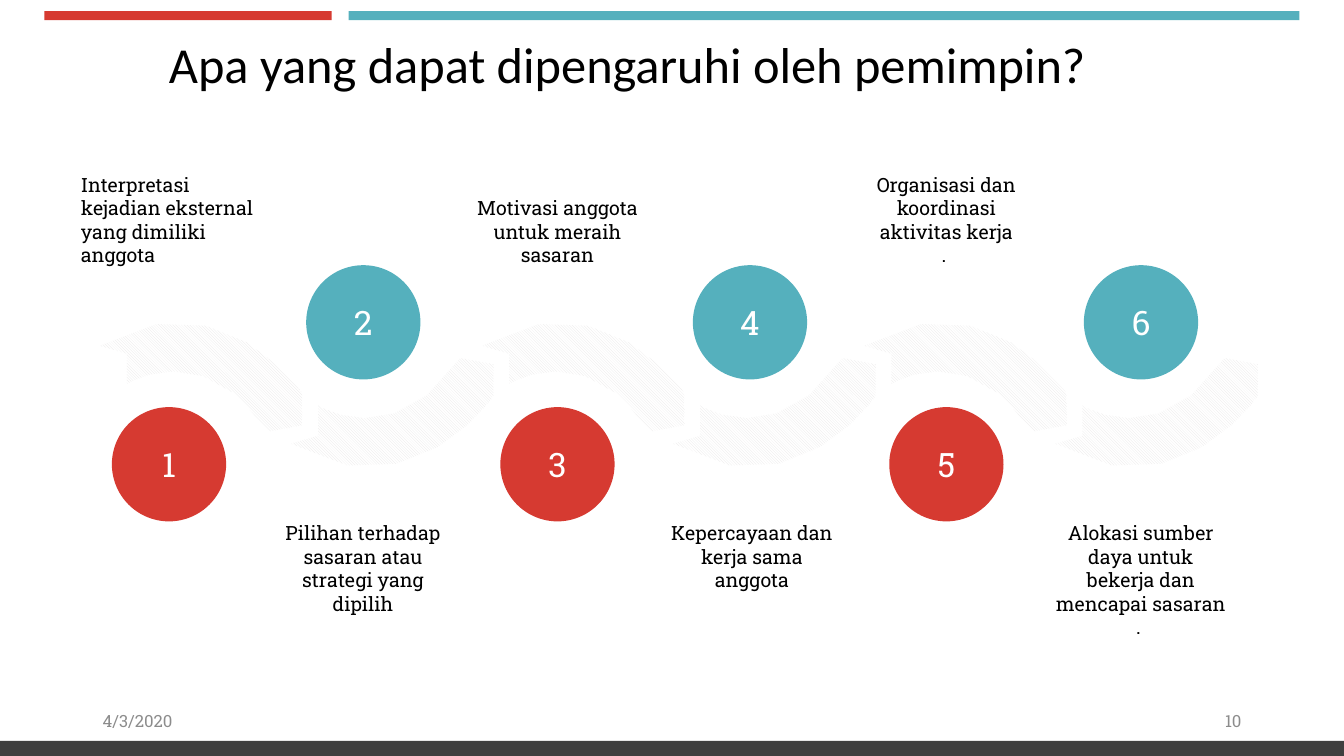
from dataclasses import dataclass

import lxml.etree
import pptx
import pptx.dml.color
import pptx.enum.dml
import pptx.enum.shapes
import pptx.enum.text
import pptx.oxml.ns
import pptx.util

Pt = pptx.util.Pt
ALIGN = pptx.enum.text.PP_ALIGN
ANCHOR = pptx.enum.text.MSO_ANCHOR
GROW = pptx.enum.text.MSO_AUTO_SIZE.SHAPE_TO_FIT_TEXT
SHAPE = pptx.enum.shapes.MSO_SHAPE

RED, TEAL, DARK = "D63A31", "55B0BD", "3F3F3F"
WHITE, BLACK, GREY, PALE = "FFFFFF", "000000", "8C8C8C", "E7E6E6"
SLAB = "Roboto Slab"
NO_MARGINS = {"margin_left": 0, "margin_top": 0, "margin_right": 0, "margin_bottom": 0}

CIRCLE_SIZE, CIRCLE_TOP_UPPER, CIRCLE_TOP_LOWER = 81.6, 189.4, 290.8
CAPTION_LEFT, CAPTION_STEP, CAPTION_WIDTH = 57.8, 138.9, 125.3
CAPTION_BOTTOM_UPPER, CAPTION_TOP_LOWER, LINE_HEIGHT = 190.6, 372.2, 16.95
ARROW_LEFT, ARROW_STEP, ARROW_MIRROR = 71.3, 136.5, 564
CURVE_STEPS = 6

Point = tuple[float, float]


@dataclass
class Influence:
    circle_left: float
    lines: int
    paragraphs: tuple[str, ...]
    align: ALIGN = ALIGN.CENTER


@dataclass
class Bar:
    left: float
    top: float
    width: float
    height: float
    color: str


@dataclass
class FooterNote:
    left: float
    text: str
    align: ALIGN


@dataclass
class Rule:
    left: float
    top: float
    width: float = 90


BARS = [
    Bar(31.7, 7.9, 205.2, 6.5, RED),
    Bar(249.1, 7.9, 679, 6.5, TEAL),
    Bar(0, 529.2, 960, 10.8, DARK),
]
FOOTER_NOTES = [
    FooterNote(66.2, "4/3/2020", ALIGN.LEFT),
    FooterNote(677.9, "10", ALIGN.RIGHT),
]
RULES = [
    Rule(100.8, 208.8),
    Rule(231.1, 354.2),
    Rule(369.4, 208.8),
    Rule(499.7, 354.2),
    Rule(769.7, 354.2),
    Rule(70.6, 453.6, 831.6),
]
INFLUENCES = [
    Influence(79.9, 4, ("Interpretasi kejadian eksternal yang dimiliki anggota",), ALIGN.LEFT),
    Influence(218.7, 4, ("Pilihan terhadap sasaran atau strategi yang dipilih",)),
    Influence(357.4, 3, ("Motivasi anggota untuk meraih sasaran",)),
    Influence(494.9, 3, ("Kepercayaan dan kerja sama anggota",)),
    Influence(635.2, 4, ("Organisasi dan koordinasi aktivitas kerja", ". ")),
    Influence(774.2, 5, ("Alokasi sumber daya untuk bekerja dan mencapai sasaran", ". ")),
]


def color_of(value: str) -> pptx.dml.color.RGBColor:
    return pptx.dml.color.RGBColor.from_string(value)


def apply(target, values: dict) -> None:
    for name, value in values.items():
        setattr(target, name, value)


def write(box, paragraphs: tuple[str, ...], font: str, size: float, color: str,
          para_format: dict, frame_format: dict) -> None:
    frame = box.text_frame
    apply(frame, {"word_wrap": True, **frame_format})
    for index, text in enumerate(paragraphs):
        para = frame.paragraphs[0] if index == 0 else frame.add_paragraph()
        apply(para, para_format)
        span = para.add_run()
        span.text = text
        apply(span.font, {"name": font, "size": Pt(size)})
        span.font.color.rgb = color_of(color)


def add_solid(page, kind: SHAPE, left: float, top: float, width: float, height: float, color: str):
    box = page.shapes.add_shape(kind, Pt(left), Pt(top), Pt(width), Pt(height))
    box.shadow.inherit = False
    box.fill.solid()
    box.fill.fore_color.rgb = color_of(color)
    box.line.fill.background()
    return box


def add_rule(page, rule: Rule) -> None:
    line = page.shapes.add_connector(pptx.enum.shapes.MSO_CONNECTOR.STRAIGHT,
                                     Pt(rule.left + rule.width), Pt(rule.top),
                                     Pt(rule.left), Pt(rule.top))
    line.line.width = Pt(0.5)
    line.line.color.rgb = color_of(WHITE)
    properties = line.element.find(pptx.oxml.ns.qn("p:spPr"))
    lxml.etree.SubElement(properties, pptx.oxml.ns.qn("a:effectLst"))


def curve(start: Point, control: Point, end: Point) -> list[Point]:
    points = []
    for step in range(1, CURVE_STEPS + 1):
        t = step / CURVE_STEPS
        weights = ((1 - t) ** 3 + 3 * t * (1 - t) ** 2, 3 * t ** 2 * (1 - t), t ** 3)
        points.append(tuple(sum(w * p[axis] for w, p in zip(weights, (start, control, end)))
                            for axis in (0, 1)))
    return points


def arrow_outline() -> list[Point]:
    tail, notch, inner = (0, 247), (19.4, 252.7), (19.4, 274.3)
    tip, corner, outer = (121, 308.2), (144.8, 303.8), (144.6, 280.8)
    return [tail, notch, inner, *curve(inner, (74.2, 239), tip),
            corner, outer, *curve(outer, (86.2, 195.1), tail)[:-1]]


def add_arrow(page, index: int) -> None:
    left = ARROW_LEFT + ARROW_STEP * index
    points = [(Pt(left + x), Pt(ARROW_MIRROR - y if index % 2 else y)) for x, y in arrow_outline()]
    builder = page.shapes.build_freeform(*points[0])
    builder.add_line_segments(points[1:], close=True)
    arrow = builder.convert_to_shape()
    arrow.shadow.inherit = False
    arrow.fill.patterned()
    arrow.fill.pattern = pptx.enum.dml.MSO_PATTERN.LIGHT_DOWNWARD_DIAGONAL
    arrow.fill.fore_color.rgb = color_of(PALE)
    arrow.fill.back_color.rgb = color_of(WHITE)
    arrow.line.fill.background()


def add_influence(page, index: int, influence: Influence) -> None:
    raised = index % 2 == 1
    circle = add_solid(page, SHAPE.OVAL, influence.circle_left,
                       CIRCLE_TOP_UPPER if raised else CIRCLE_TOP_LOWER,
                       CIRCLE_SIZE, CIRCLE_SIZE, TEAL if raised else RED)
    write(circle, (str(index + 1),), SLAB, 24, WHITE,
          {"alignment": ALIGN.CENTER}, {"vertical_anchor": ANCHOR.MIDDLE})

    height = influence.lines * LINE_HEIGHT
    top = CAPTION_TOP_LOWER if raised else CAPTION_BOTTOM_UPPER - height
    caption = page.shapes.add_textbox(Pt(CAPTION_LEFT + CAPTION_STEP * index), Pt(top),
                                      Pt(CAPTION_WIDTH), Pt(height))
    write(caption, influence.paragraphs, SLAB, 14, BLACK, {"alignment": influence.align},
          {**NO_MARGINS, "auto_size": GROW,
           "vertical_anchor": ANCHOR.TOP if raised else ANCHOR.BOTTOM})


def main() -> None:
    deck = pptx.Presentation()
    apply(deck, {"slide_width": Pt(960), "slide_height": Pt(540)})
    page = deck.slides.add_slide(deck.slide_layouts[5])

    title = page.shapes.title
    apply(title, {"left": Pt(0), "top": Pt(28.8), "width": Pt(896.4), "height": Pt(39.6)})
    write(title, ("Apa yang dapat dipengaruhi oleh pemimpin?",), "Calibri", 36, BLACK,
          {"alignment": ALIGN.CENTER, "line_spacing": 0.9},
          {**NO_MARGINS, "auto_size": GROW, "vertical_anchor": ANCHOR.TOP})

    for bar in BARS:
        add_solid(page, SHAPE.RECTANGLE, bar.left, bar.top, bar.width, bar.height, bar.color)
    for note in FOOTER_NOTES:
        box = page.shapes.add_textbox(Pt(note.left), Pt(500.4), Pt(216), Pt(28.8))
        write(box, (note.text,), SLAB, 12, GREY,
              {"alignment": note.align}, {"vertical_anchor": ANCHOR.MIDDLE})
    for index in range(len(INFLUENCES)):
        add_arrow(page, index)
    for rule in RULES:
        add_rule(page, rule)
    for index, influence in enumerate(INFLUENCES):
        add_influence(page, index, influence)

    deck.save("out.pptx")


if __name__ == "__main__":
    main()
